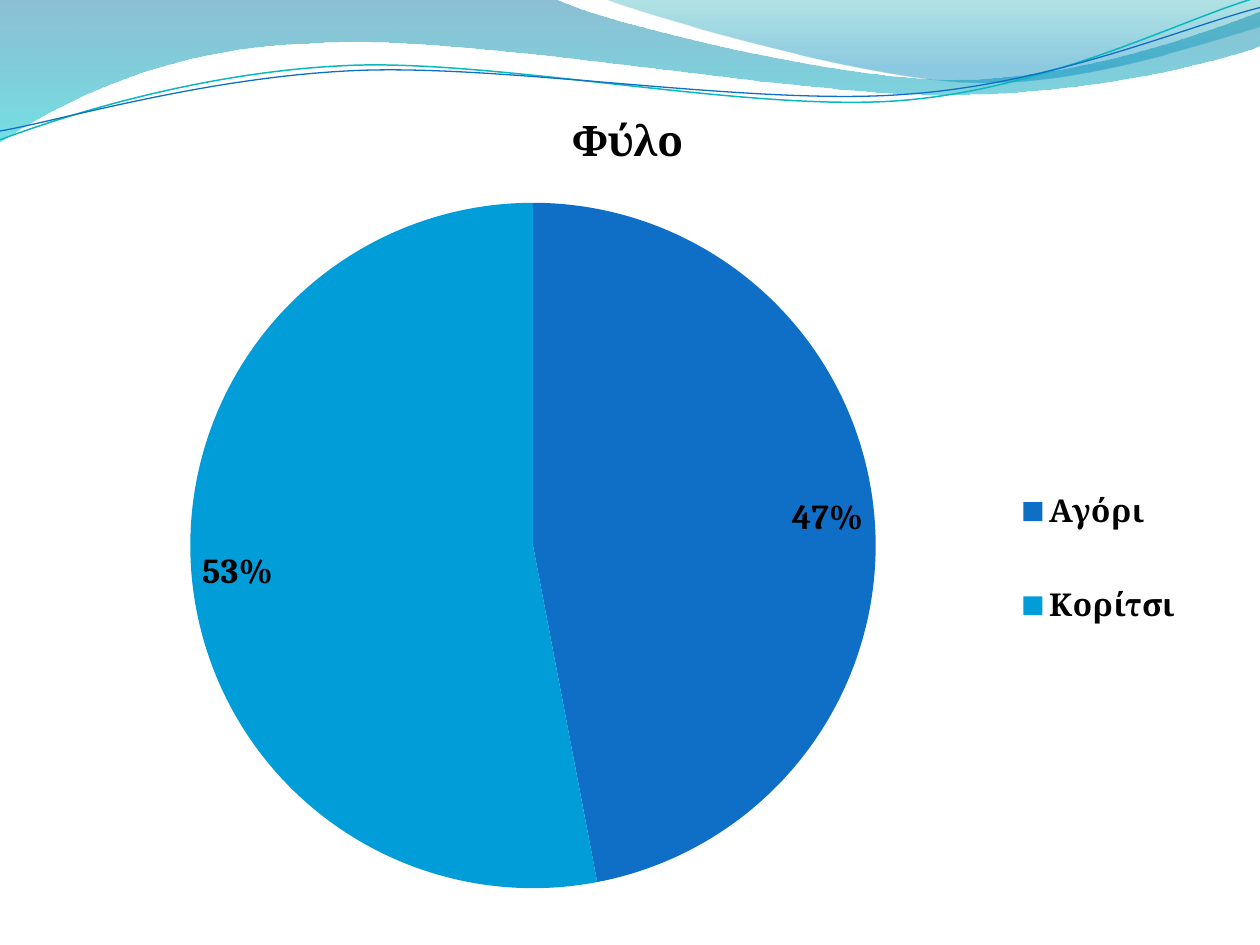
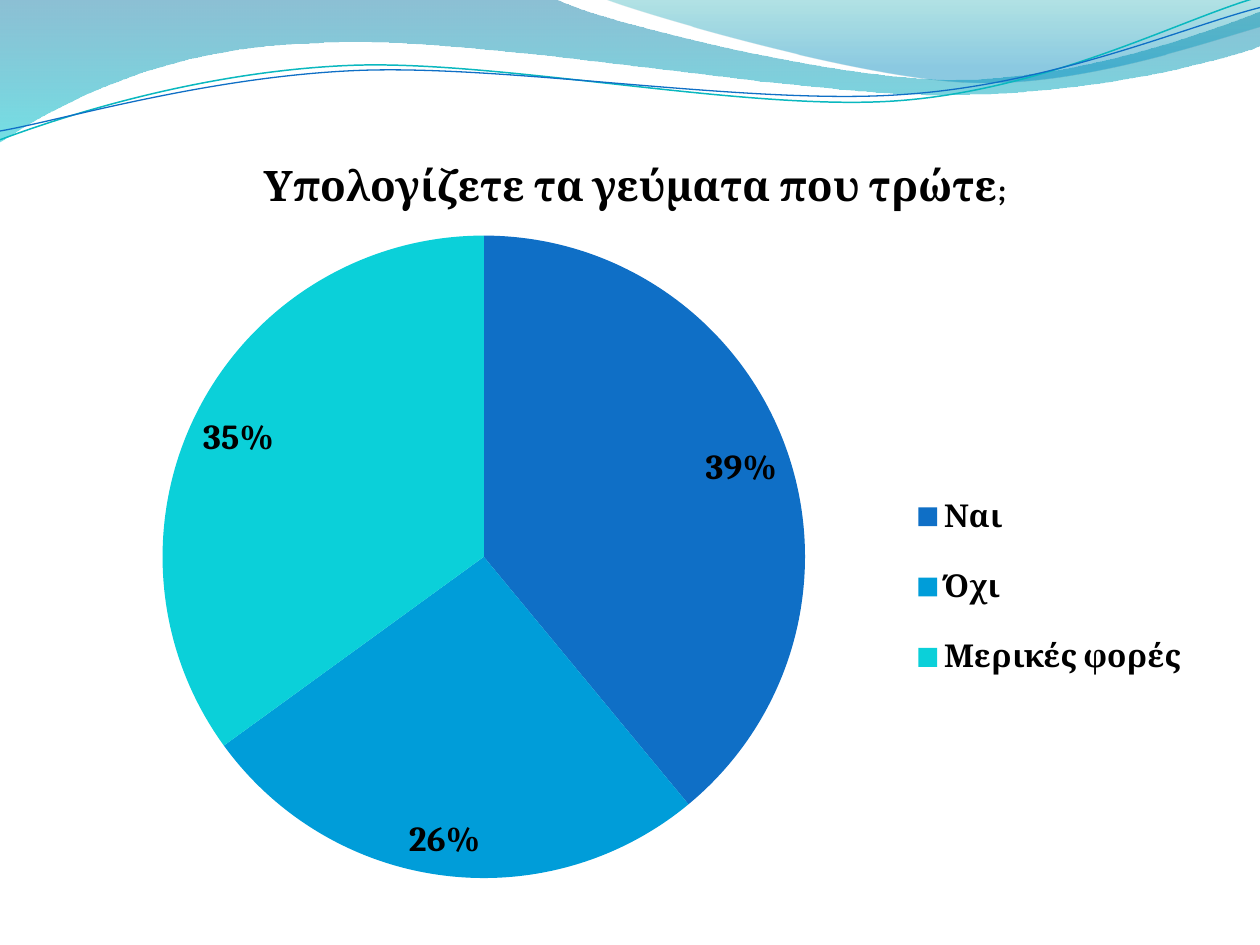
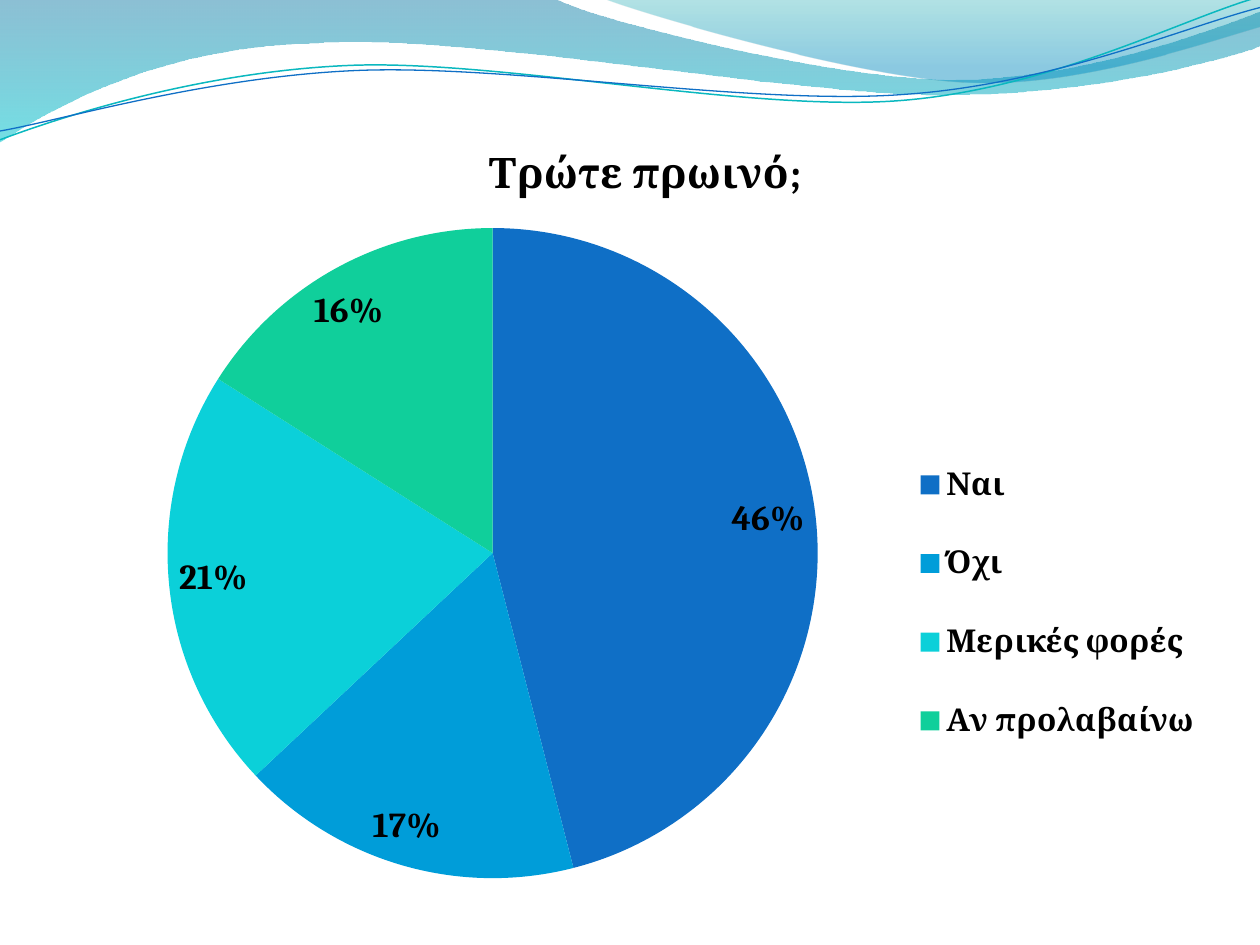
from lxml import etree
from pptx import Presentation
from pptx.chart.data import CategoryChartData
from pptx.dml.color import RGBColor
from pptx.enum.chart import XL_CHART_TYPE, XL_LABEL_POSITION, XL_LEGEND_POSITION
from pptx.oxml import parse_xml
from pptx.oxml.ns import nsdecls, qn
from pptx.util import Inches, Pt

FONT = "Cambria"
BLACK = RGBColor(0x00, 0x00, 0x00)
BLUE = RGBColor(0x0F, 0x6F, 0xC6)
SKY = RGBColor(0x00, 0x9D, 0xD9)
CYAN = RGBColor(0x0B, 0xD0, 0xD9)
GREEN = RGBColor(0x10, 0xCF, 0x9B)
TEAL = RGBColor(0x0A, 0xB8, 0xBF)
DEEP_BLUE = RGBColor(0x00, 0x74, 0xA1)
AQUA = RGBColor(0x00, 0xC6, 0xCF)
SEA = RGBColor(0x00, 0xA1, 0xA9)
OCEAN = RGBColor(0x00, 0x8B, 0xBF)
SLICE_COLORS = [BLUE, SKY, CYAN, GREEN]

# Wave outlines: two numbers are a straight step, six are a Bezier curve.
# Bands carry gradient stops (position %, colour, opacity %).
BANDS = [
    ([(0, 0), (4.4, -0.01), (4.76, 0.17, 6.64, 0.63, 7.58, 0.63),
      (8.53, 0.63, 9.58, 0.26, 10, 0.09), (10.01, 0.36),
      (9.83, 0.44, 8.7, 0.76, 7.46, 0.75), (6.22, 0.75, 3.82, 0.28, 2.57, 0.34),
      (1.29, 0.36, 0.46, 0.83, -0.01, 1.13), (0, 0)],
     [(0, DEEP_BLUE, 45), (100, AQUA, 55)]),
    ([(4.79, -0.01), (5.09, 0.11, 6.82, 0.62, 7.69, 0.65),
      (8.56, 0.69, 9.61, 0.32, 10, 0.21), (10, 0), (4.79, -0.01)],
     [(0, SEA, 30), (80, OCEAN, 45)]),
]
WAVE_LINES = [
    ([(0, 1.11), (0.48, 0.93, 1.58, 0.57, 2.77, 0.52),
      (3.95, 0.47, 5.93, 0.89, 7.13, 0.8), (8.33, 0.71, 9.38, 0.15, 9.98, -0.02)],
     TEAL, 0.85),
    ([(0, 1.04), (0.47, 0.96, 1.64, 0.61, 2.83, 0.56),
      (4.03, 0.51, 5.97, 0.84, 7.17, 0.75), (8.36, 0.67, 9.41, 0.21, 10, 0.06)],
     BLUE, 0.75),
]

# Boxes are left, top, width, height on the slide; titles are (text, size) runs.
PIES = [
    dict(frame=(0.39, 0.7, 9.22, 6.48), pie=(1.51, 1.61, 5.44, 5.44),
         legend=(8.02, 3.46, 1.4, 1.95), title=[("Φύλο", 24)], title_at=(4.48, 0.84),
         values={"Αγόρι": 0.47, "Κορίτσι": 0.53}),
    dict(frame=(0.39, 1.07, 9.3, 6.04), pie=(1.29, 1.87, 5.1, 5.1),
         legend=(7.18, 3.69, 2.3, 1.94),
         title=[("Υπολογίζετε τα γεύματα που τρώτε", 24), (";", 18)],
         values={"Ναι": 0.39, "Όχι": 0.26, "Μερικές φορές": 0.35}),
    dict(frame=(0.47, 0.92, 9.3, 6.19), pie=(1.33, 1.81, 5.16, 5.16),
         legend=(7.19, 3.37, 2.4, 2.83), title=[("Τρώτε πρωινό;", 24)],
         values={"Ναι": 0.46, "Όχι": 0.17, "Μερικές φορές": 0.21,
                 "Αν προλαβαίνω": 0.16}),
]


def add_outline(s, steps, close):
    """Build a freeform through the step ends, then bend its curved steps."""
    ends = [(Inches(step[-2]), Inches(step[-1])) for step in steps]
    builder = s.shapes.build_freeform(*ends[0])
    builder.add_line_segments(ends[1:], close=close)
    sp = builder.convert_to_shape()
    sp.shadow.inherit = False
    segments = list(sp.element.iter(qn("a:lnTo")))
    for segment, step in zip(segments, steps[1:]):
        if len(step) == 6:
            curve = etree.Element(qn("a:cubicBezTo"))
            for x, y in zip(step[::2], step[1::2]):
                pt = etree.SubElement(curve, qn("a:pt"))
                pt.set("x", str(Inches(x) - sp.left))
                pt.set("y", str(Inches(y) - sp.top))
            segment.getparent().replace(segment, curve)
    return sp


def add_band(s, steps, stops):
    sp = add_outline(s, steps, True)
    sp.line.fill.background()
    gs = "".join(
        f'<a:gs pos="{pos * 1000}"><a:srgbClr val="{color}">'
        f'<a:alpha val="{alpha * 1000}"/></a:srgbClr></a:gs>'
        for pos, color, alpha in stops)
    fill = parse_xml(f'<a:gradFill {nsdecls("a")} rotWithShape="1"><a:gsLst>{gs}</a:gsLst>'
                     '<a:lin ang="5400000" scaled="0"/></a:gradFill>')
    sp.element.spPr.find(qn("a:custGeom")).addnext(fill)
    return sp


def add_wave_line(s, steps, color, width):
    sp = add_outline(s, steps, False)
    sp.fill.background()
    sp.line.color.rgb = color
    sp.line.width = Pt(width)
    return sp


def decorate_layout(layout, s):
    """Draw the waves on a slide, then move them to its layout."""
    for ph in list(layout.placeholders):
        layout.shapes.element.remove(ph.element)
    waves = [add_band(s, *band) for band in BANDS]
    waves += [add_wave_line(s, *line) for line in WAVE_LINES]
    for sp in waves:
        layout.shapes.element.append(sp.element)


def place_in_chart(parent, index, box, frame, inner=False):
    """Fix a chart part's place, as fractions of the chart frame."""
    old = parent.find(qn("c:layout"))
    if old is not None:
        parent.remove(old)
    layout = etree.Element(qn("c:layout"))
    manual = etree.SubElement(layout, qn("c:manualLayout"))
    settings = [("layoutTarget", "inner")] if inner else []
    settings += [("xMode", "edge"), ("yMode", "edge"),
                 ("x", (box[0] - frame[0]) / frame[2]),
                 ("y", (box[1] - frame[1]) / frame[3])]
    if len(box) == 4:
        settings += [("w", box[2] / frame[2]), ("h", box[3] / frame[3])]
    for tag, value in settings:
        etree.SubElement(manual, qn(f"c:{tag}")).set("val", str(value))
    parent.insert(index, layout)


def style_font(font, size, bold=False):
    font.name = FONT
    font.size = Pt(size)
    font.bold = bold
    font.color.rgb = BLACK


def add_pie(s, frame, pie, legend, title, values, title_at=None):
    data = CategoryChartData(number_format="0%")
    data.categories = list(values)
    data.add_series("".join(text for text, _ in title), list(values.values()))
    chart = s.shapes.add_chart(XL_CHART_TYPE.PIE, *map(Inches, frame), data).chart
    style_font(chart.font, 10)

    # Title
    chart.has_title = True
    p = chart.chart_title.text_frame.paragraphs[0]
    for text, size in title:
        r = p.add_run()
        r.text = text
        style_font(r.font, size, True)
    if title_at:
        title_xml = chart.element.chart.find(qn("c:title"))
        place_in_chart(title_xml, 1, title_at, frame)

    # Slices and their labels
    plot = chart.plots[0]
    plot.vary_by_categories = True
    for i, color in enumerate(SLICE_COLORS[:len(values)]):
        fill = plot.series[0].points[i].format.fill
        fill.solid()
        fill.fore_color.rgb = color
    labels = plot.series[0].data_labels
    labels.show_value = True
    labels.number_format = "0%"
    labels.number_format_is_linked = False
    labels.position = XL_LABEL_POSITION.BEST_FIT
    style_font(labels.font, 20, True)
    place_in_chart(chart.element.chart.plotArea, 0, pie, frame, inner=True)

    # Legend
    chart.has_legend = True
    chart.legend.position = XL_LEGEND_POSITION.RIGHT
    chart.legend.include_in_layout = False
    style_font(chart.legend.font, 18, True)
    legend_xml = chart.element.chart.find(qn("c:legend"))
    place_in_chart(legend_xml, 1, legend, frame)


def main():
    prs = Presentation()
    prs.slide_width, prs.slide_height = Inches(10), Inches(7.5)
    blank = prs.slide_layouts[6]
    slides = [prs.slides.add_slide(blank) for _ in PIES]
    decorate_layout(blank, slides[0])
    for s, pie in zip(slides, PIES):
        add_pie(s, **pie)
    prs.save("out.pptx")


if __name__ == "__main__":
    main()
